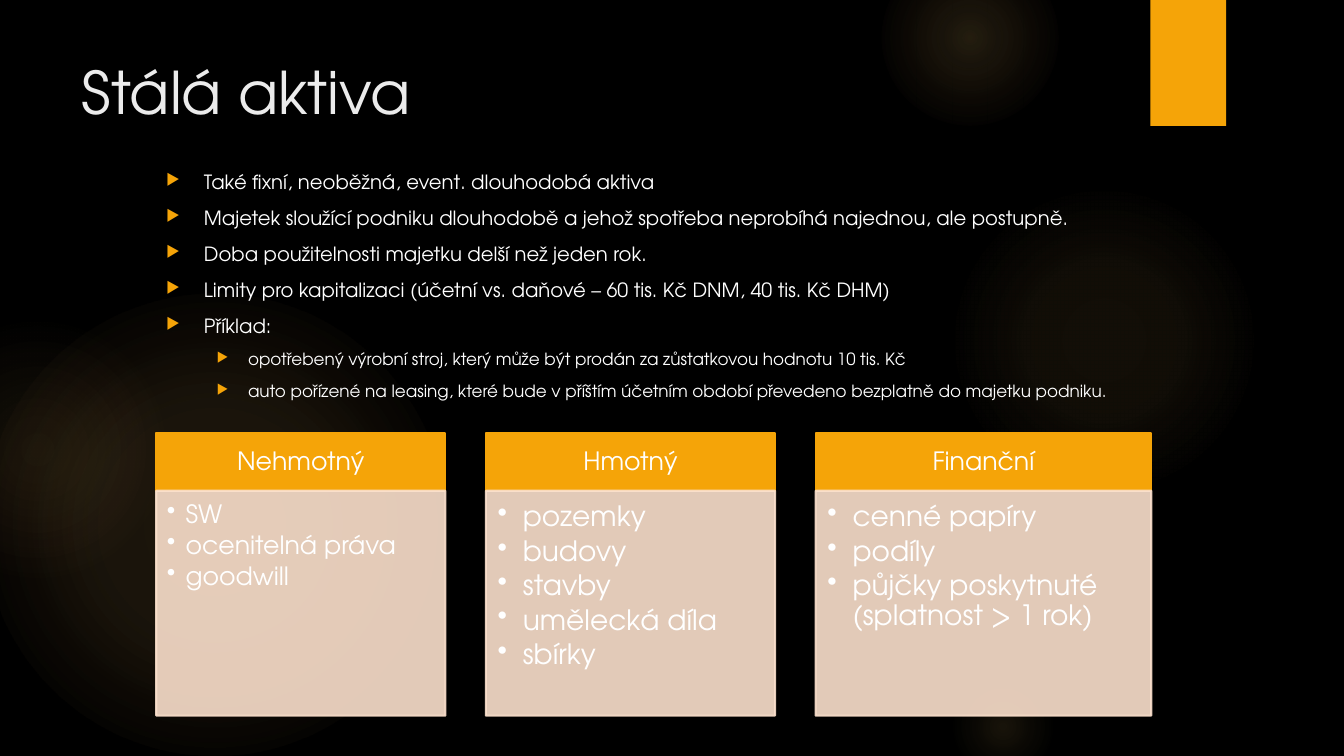
from lxml.etree import fromstring
from pptx import Presentation
from pptx.dml.color import RGBColor
from pptx.enum.shapes import MSO_SHAPE
from pptx.enum.text import MSO_ANCHOR, PP_ALIGN
from pptx.util import Pt

FONT = "TeX Gyre Adventor"
NS = 'xmlns:a="http://schemas.openxmlformats.org/drawingml/2006/main"'
ORANGE, PEACH, WHITE = "F5A408", "FBE0CC", "FFFFFF"
rgb = RGBColor.from_string


def add_box(shape, x, y, w, h, fill, line=None, alpha=100):
    sp = s.shapes.add_shape(shape, Pt(x), Pt(y), Pt(w), Pt(h))
    sp.shadow.inherit = False
    sp.fill.solid()
    sp.fill.fore_color.rgb = rgb(fill)
    if line:
        sp.line.color.rgb = rgb(line)
        sp.line.width = Pt(1.5)
    else:
        sp.line.fill.background()
    if alpha < 100:
        for clr in sp._element.spPr.iter("{*}srgbClr"):
            clr.append(fromstring(f'<a:alpha {NS} val="{alpha * 1000}"/>'))
    return sp


def add_text(p, text, size, color=WHITE, bullet=None, left=0, hang=0):
    r = p.add_run()
    r.text = text
    r.font.name, r.font.size = FONT, Pt(size)
    r.font.color.rgb = rgb(color)
    if bullet:
        pPr = p._p.get_or_add_pPr()
        pPr.set("marL", str(Pt(left)))
        pPr.set("indent", str(-Pt(hang)))
        if bullet == "▶":
            pPr.append(fromstring(f'<a:buClr {NS}><a:srgbClr val="{ORANGE}"/></a:buClr>'))
            pPr.append(fromstring(f'<a:buSzPct {NS} val="80000"/>'))
        pPr.append(fromstring(f'<a:buChar {NS} char="{bullet}"/>'))


prs = Presentation()
prs.slide_width, prs.slide_height = Pt(960), Pt(540)
s = prs.slides.add_slide(prs.slide_layouts[6])
s.background.fill.solid()
s.background.fill.fore_color.rgb = rgb("000000")

# Soft glows: left, top, diameter, gradient stops (position, colour, opacity)
GOLD = "FAC96A"
glows = [
    (-12, 210, 330, [(0, GOLD, 11), (36, GOLD, 10), (75, GOLD, 0)]),
    (-66, 228, 186, [(0, GOLD, 8), (36, GOLD, 5), (71, "F59B74", 0)]),
    (677.5, 132, 222, [(0, GOLD, 7), (36, GOLD, 6), (69, GOLD, 0)]),
    (630, -36, 126, [(0, GOLD, 14), (36, GOLD, 7), (73, GOLD, 0)]),
    (677.5, 480, 78, [(0, GOLD, 10), (31, GOLD, 5), (66, GOLD, 0)]),
]
for x, y, d, stops in glows:
    sp = add_box(MSO_SHAPE.OVAL, x, y, d, d, GOLD)
    gs = "".join(
        f'<a:gs pos="{pos * 1000}"><a:srgbClr val="{c}"><a:alpha val="{a * 1000}"/></a:srgbClr></a:gs>'
        for pos, c, a in stops)
    grad = fromstring(
        f'<a:gradFill {NS} rotWithShape="1"><a:gsLst>{gs}</a:gsLst><a:path path="circle">'
        '<a:fillToRect l="50000" t="50000" r="50000" b="50000"/></a:path></a:gradFill>')
    spPr = sp._element.spPr
    spPr.replace(spPr.find("{*}solidFill"), grad)

# Corner tab
add_box(MSO_SHAPE.RECTANGLE, 821.8, 0, 54, 90, ORANGE)

# Title
tf = s.shapes.add_textbox(Pt(51), Pt(36), Pt(741), Pt(57.6)).text_frame
tf.word_wrap = True
tf.vertical_anchor = MSO_ANCHOR.MIDDLE
add_text(tf.paragraphs[0], "Stálá aktiva", 42, "EBEBEB")

# Bullet list: level, text
points = [
    (0, "Také fixní, neoběžná, event. dlouhodobá aktiva"),
    (0, "Majetek sloužící podniku dlouhodobě a jehož spotřeba neprobíhá najednou, ale postupně."),
    (0, "Doba použitelnosti majetku delší než jeden rok."),
    (0, "Limity pro kapitalizaci (účetní vs. daňové – 60 tis. Kč DNM, 40 tis. Kč DHM)"),
    (0, "Příklad:"),
    (1, "opotřebený výrobní stroj, který může být prodán za zůstatkovou hodnotu 10 tis. Kč"),
    (1, "auto pořízené na leasing, které bude v příštím účetním období převedeno bezplatně do majetku podniku."),
]
tf = s.shapes.add_textbox(Pt(111.6), Pt(118), Pt(692), Pt(181.5)).text_frame
tf.word_wrap = True
for i, (level, text) in enumerate(points):
    p = tf.add_paragraph() if i else tf.paragraphs[0]
    size, left, hang = [(14, 27, 27), (12, 58.5, 22.5)][level]
    p.level = level
    p.space_before, p.space_after = Pt(size * 0.2), Pt(6)
    add_text(p, text, size, bullet="▶", left=left, hang=hang)

# Asset cards: heading, width, text size, items
cards = [
    ("Nehmotný", 206.6, 18, ["SW", "ocenitelná práva", "goodwill"]),
    ("Hmotný", 206.6, 20, ["pozemky", "budovy", "stavby", "umělecká díla", "sbírky"]),
    ("Finanční", 239.8, 20, ["cenné papíry", "podíly", "půjčky poskytnuté (splatnost > 1 rok)"]),
]
x, top, head_h, body_h, gap = 111.6, 309.6, 41, 160.6, 28.9
for heading, w, size, items in cards:
    tf = add_box(MSO_SHAPE.RECTANGLE, x, top, w, head_h, ORANGE, ORANGE).text_frame
    tf.word_wrap = True
    tf.vertical_anchor = MSO_ANCHOR.MIDDLE
    p = tf.paragraphs[0]
    p.alignment, p.line_spacing = PP_ALIGN.CENTER, 0.9
    add_text(p, heading, 18)

    tf = add_box(MSO_SHAPE.RECTANGLE, x, top + head_h, w, body_h, PEACH, PEACH, 90).text_frame
    tf.word_wrap = True
    tf.vertical_anchor = MSO_ANCHOR.TOP
    tf.margin_left = tf.margin_top = Pt(size * 0.42)
    tf.margin_right = Pt(size * 0.57)
    hang = 13.5 if size == 18 else 18
    for i, item in enumerate(items):
        p = tf.add_paragraph() if i else tf.paragraphs[0]
        p.alignment, p.line_spacing, p.space_after = PP_ALIGN.LEFT, 0.9, Pt(size * 0.15)
        add_text(p, item, size, bullet="•", left=hang, hang=hang)
    x += w + gap

prs.save("out.pptx")
